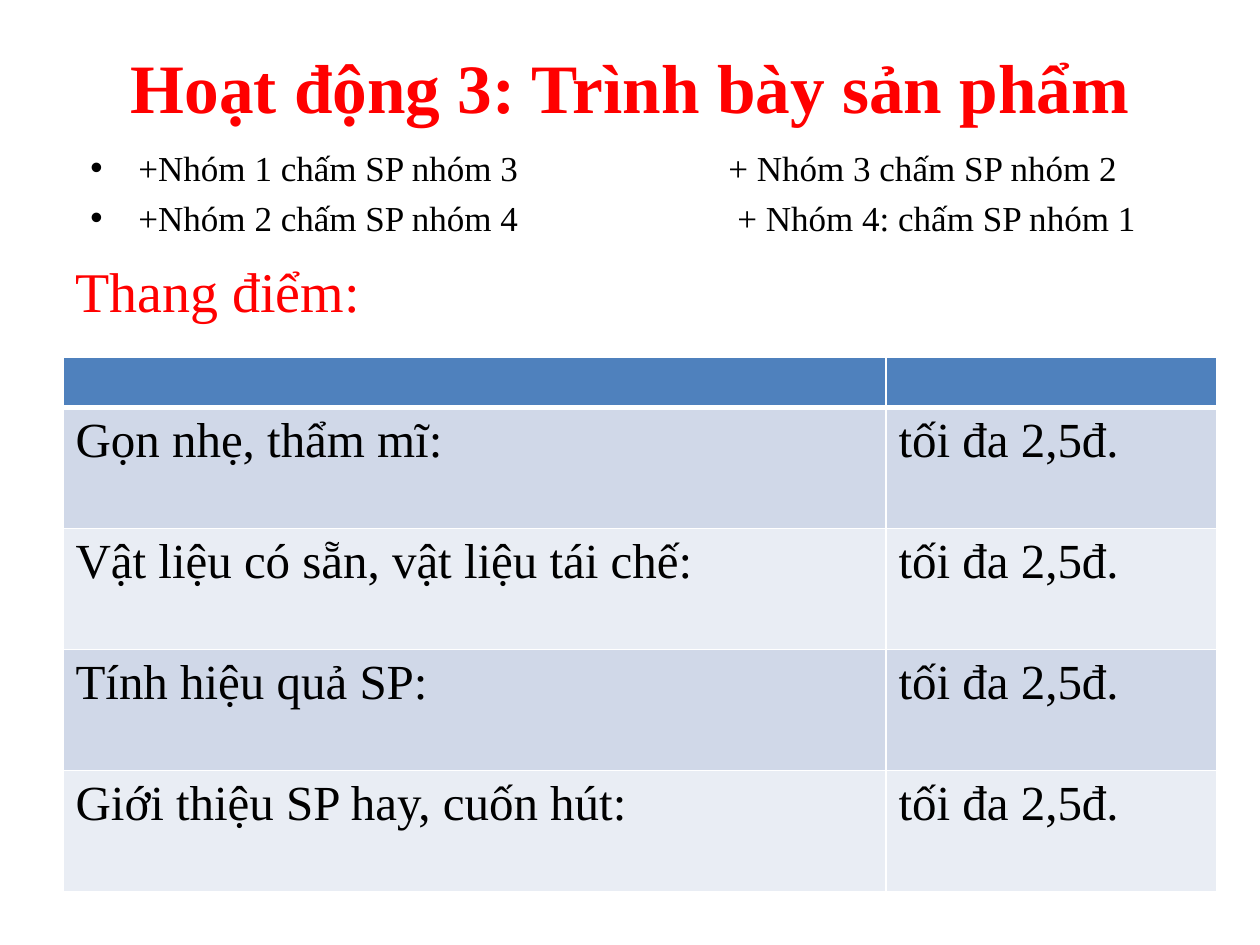
"""Build a slide on presenting products, with pairings and a score table."""
from dataclasses import dataclass

from lxml.etree import SubElement as Sub
from pptx import Presentation
from pptx.dml.color import RGBColor as Rgb
from pptx.enum.text import MSO_ANCHOR as Anchor, PP_ALIGN as Align
from pptx.oxml.ns import qn
from pptx.util import Pt

PX = 914400 // 126
FONT = "Times New Roman"
HUES = {
    "red": "FF0000",
    "ink": "000000",
    "head": "4F81BD",
    "odd": "D0D8E8",
    "even": "E9EDF4",
    "rule": "FFFFFF",
}


@dataclass(frozen=True)
class Line:
    text: str
    size: float
    hue: str = "ink"
    bold: bool = False
    align: Align = Align.LEFT
    before: int = 0
    left: int = 0
    hang: int = 0
    mark: str = ""


@dataclass(frozen=True)
class Box:
    x: int
    y: int
    w: int
    h: int
    lines: tuple[Line, ...]


@dataclass(frozen=True)
class Score:
    item: str
    most: str = "tối đa 2,5đ."


BOXES = (
    Box(63, 38, 1134, 90, (
        Line("Hoạt động 3: Trình bày sản phẩm", 39.6, "red", True, Align.CENTER),
    )),
    Box(63, 140, 640, 190, (
        Line("+Nhóm 1 chấm SP nhóm 3", 20, left=63, hang=48, mark="•"),
        Line("+Nhóm 2 chấm SP nhóm 4", 20, before=5, left=63, hang=48, mark="•"),
        Line("Thang điểm:", 32, "red", before=10),
    )),
    Box(716, 140, 481, 110, (
        Line("+ Nhóm 3 chấm SP nhóm 2", 20),
        Line("+ Nhóm 4: chấm SP nhóm 1", 20, before=5, left=9),
    )),
)
SCORES = (
    Score("Gọn nhẹ, thẩm mĩ:"),
    Score("Vật liệu có sẵn, vật liệu tái chế:"),
    Score("Tính hiệu quả SP:"),
    Score("Giới thiệu SP hay, cuốn hút:"),
)
COLS = (823, 331)
HEAD, ROW = 50, 121


def write(para, line: Line) -> None:
    para.alignment = line.align
    para.space_before = Pt(line.before)
    props = para._p.get_or_add_pPr()
    props.set("marL", str(line.left * PX))
    props.set("indent", str(-line.hang * PX))
    if line.mark:
        Sub(props, qn("a:buFont"), typeface="Arial")
        Sub(props, qn("a:buChar"), char=line.mark)
    run = para.add_run()
    run.text = line.text
    font = run.font
    font.name, font.size, font.bold = FONT, Pt(line.size), line.bold
    font.color.rgb = Rgb.from_string(HUES[line.hue])


def draw_box(slide, box: Box) -> None:
    shape = slide.shapes.add_textbox(box.x * PX, box.y * PX, box.w * PX, box.h * PX)
    frame = shape.text_frame
    frame.word_wrap = True
    frame.vertical_anchor = Anchor.TOP
    for i, line in enumerate(box.lines):
        write(frame.add_paragraph() if i else frame.paragraphs[0], line)


def style(cell, hue: str, base: int) -> None:
    props = cell._tc.get_or_add_tcPr()
    for side, width in (("L", 1), ("R", 1), ("T", 1), ("B", base)):
        edge = Sub(props, qn(f"a:ln{side}"), w=str(Pt(width)))
        fill = Sub(edge, qn("a:solidFill"))
        Sub(fill, qn("a:srgbClr"), val=HUES["rule"])
    cell.fill.solid()
    cell.fill.fore_color.rgb = Rgb.from_string(HUES[hue])


def draw_table(slide, x: int, y: int) -> None:
    high = HEAD + ROW * len(SCORES)
    frame = slide.shapes.add_table(
        len(SCORES) + 1, len(COLS), x * PX, y * PX, sum(COLS) * PX, high * PX)
    table = frame.table
    for col, width in zip(table.columns, COLS):
        col.width = width * PX
    table.rows[0].height = HEAD * PX
    for cell in table.rows[0].cells:
        style(cell, "head", 3)
    for i, score in enumerate(SCORES, 1):
        table.rows[i].height = ROW * PX
        for cell, text in zip(table.rows[i].cells, (score.item, score.most)):
            style(cell, "odd" if i % 2 else "even", 1)
            write(cell.text_frame.paragraphs[0], Line(text, 28))


def main() -> None:
    deck = Presentation()
    deck.slide_width, deck.slide_height = 1260 * PX, 945 * PX
    slide = deck.slides.add_slide(deck.slide_layouts[6])
    for box in BOXES:
        draw_box(slide, box)
    draw_table(slide, 63, 357)
    deck.save("out.pptx")


if __name__ == "__main__":
    main()
